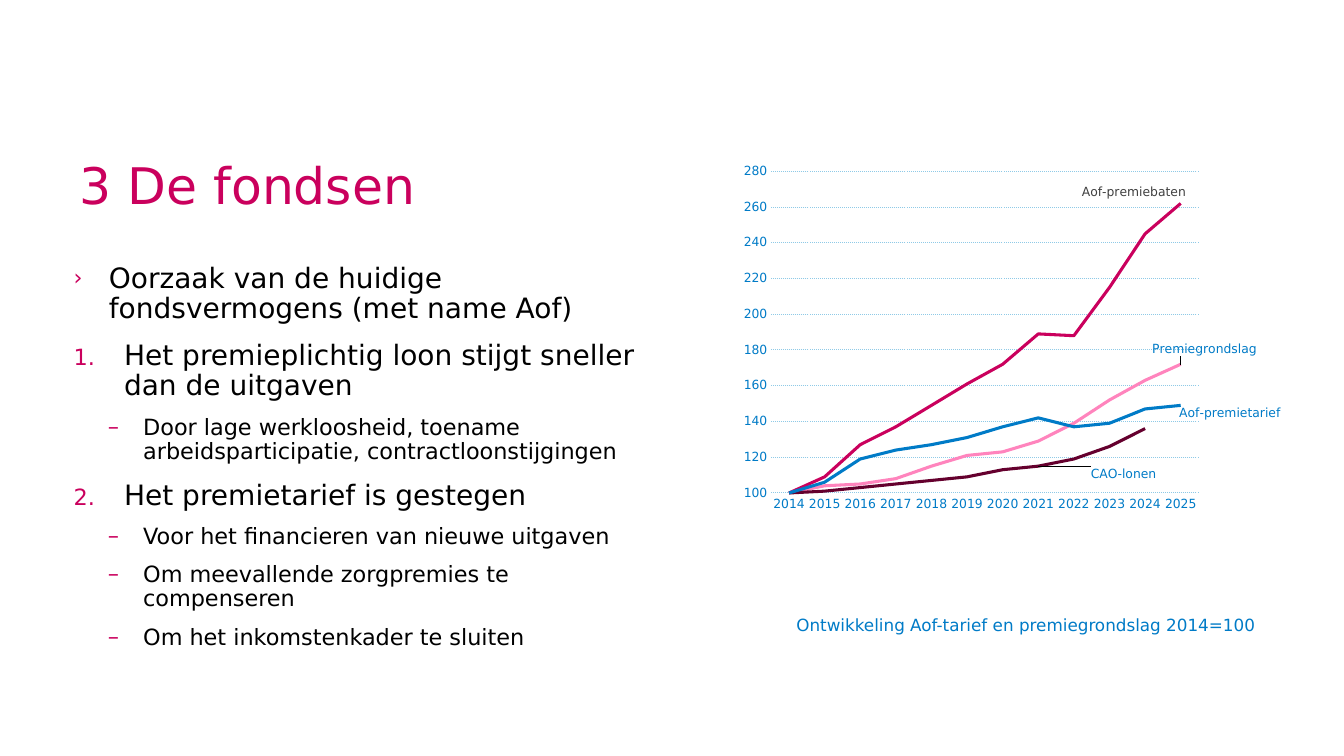
"""Builds the slide on the funds, with an outline list and a line chart."""
from typing import NamedTuple, Optional

from pptx import Presentation
from pptx.chart.data import CategoryChartData
from pptx.dml.color import RGBColor
from pptx.enum.chart import XL_CHART_TYPE, XL_LABEL_POSITION, XL_TICK_MARK
from pptx.enum.dml import MSO_LINE
from pptx.enum.text import MSO_ANCHOR, MSO_AUTO_SIZE, PP_ALIGN
from pptx.oxml import parse_xml
from pptx.oxml.ns import nsdecls, qn
from pptx.util import Emu, Inches, Pt

LINE = XL_CHART_TYPE.LINE
RIGHT = XL_LABEL_POSITION.RIGHT
NO_TICK = XL_TICK_MARK.NONE
DOTS = MSO_LINE.ROUND_DOT
TOP, BOTTOM = MSO_ANCHOR.TOP, MSO_ANCHOR.BOTTOM
NO_FIT = MSO_AUTO_SIZE.NONE
LEFT = PP_ALIGN.LEFT

FACE = "DejaVu Sans"
PINK, BLUE, BLACK = "CA005D", "007BC7", "000000"
WIDE, HIGH = Inches(13.33), Inches(7.5)
COLS, ROWS = 133.3, 75
YEARS = [str(year) for year in range(2014, 2026)]


class Box(NamedTuple):
    """A place on the grid, in columns and rows."""
    col: float
    row: float
    cols: float
    rows: float


class Mark(NamedTuple):
    """A kind of list item: bullet, level, indents in columns, and type size."""
    bullet: str
    level: int
    margin: float
    hang: float
    size: int
    before: int
    scale: int


class Trend(NamedTuple):
    """A chart line with its label point and label shift as chart shares."""
    name: str
    values: list[Optional[int]]
    hue: str
    ink: str
    point: int
    right: float
    down: float


POINT = Mark('<a:buChar {} char="›"/>', 0, 3.5, 3.5, 20, 12, 80)
COUNT = Mark('<a:buAutoNum {} type="arabicPeriod"/>', 0, 5, 5, 20, 12, 80)
DASH = Mark('<a:buChar {} char="–"/>', 1, 6.9, 3.5, 16, 10, 100)

ITEMS = [
    (POINT, "Oorzaak van de huidige fondsvermogens (met name Aof)"),
    (COUNT, "Het premieplichtig loon stijgt sneller dan de uitgaven"),
    (DASH, "Door lage werkloosheid, toename arbeidsparticipatie, contractloonstijgingen"),
    (COUNT, "Het premietarief is gestegen"),
    (DASH, "Voor het financieren van nieuwe uitgaven"),
    (DASH, "Om meevallende zorgpremies te compenseren"),
    (DASH, "Om het inkomstenkader te sluiten"),
]

TRENDS = [
    Trend("Aof-premiebaten", [100, 109, 127, 137, 149, 161, 172, 189, 188, 215, 245, 262],
          PINK, "404040", 11, -0.19, -0.03),
    Trend("Premiegrondslag", [100, 104, 105, 108, 115, 121, 123, 129, 139, 152, 163, 172],
          "FF84BD", BLUE, 11, -0.06, -0.04),
    Trend("CAO-lonen", [100, 101, 103, 105, 107, 109, 113, 115, 119, 126, 136, None],
          "65002E", BLUE, 7, 0.09, 0.02),
    Trend("Aof-premietarief", [100, 106, 119, 124, 127, 131, 137, 142, 137, 139, 147, 149],
          BLUE, BLUE, 11, -0.01, 0.02),
]


def paint(code: str) -> RGBColor:
    """Turn a hex string into a colour."""
    return RGBColor.from_string(code)


def across(cols: float) -> Emu:
    """Turn columns into a length."""
    return Emu(round(WIDE * cols / COLS))


def place(box: Box) -> tuple[Emu, Emu, Emu, Emu]:
    """Turn a grid box into left, top, width and height."""
    top, height = (Emu(round(HIGH * rows / ROWS)) for rows in (box.row, box.rows))
    return across(box.col), top, across(box.cols), height


def move(shape, box: Box) -> None:
    """Set a shape on the grid."""
    shape.left, shape.top, shape.width, shape.height = place(box)


def style(font, size: int, code: str) -> None:
    """Set the face, size and colour of a font."""
    font.name, font.size, font.bold = FACE, Pt(size), False
    font.color.rgb = paint(code)


def add_title(slide) -> None:
    """Fill the title."""
    title = slide.shapes.title
    move(title, Box(6.9, 11.5, 119.5, 10.4))
    frame = title.text_frame
    frame.text = "3 De fondsen"
    frame.vertical_anchor, frame.auto_size = BOTTOM, NO_FIT
    para = frame.paragraphs[0]
    para.alignment, para.line_spacing = LEFT, 0.9
    style(para.runs[0].font, 36, PINK)


def add_item(para, mark: Mark, text: str, first: bool) -> None:
    """Fill one list item."""
    para.text = text
    para.level, para.alignment, para.line_spacing = mark.level, LEFT, 0.9
    para.space_before, para.space_after = Pt(0 if first else mark.before), Pt(0)
    props = para._p.get_or_add_pPr()
    props.set("marL", str(across(mark.margin)))
    props.set("indent", str(-across(mark.hang)))
    space = nsdecls("a")
    for part in (f'<a:buClr {space}><a:srgbClr val="{PINK}"/></a:buClr>',
                 f'<a:buSzPct {space} val="{mark.scale * 1000}"/>',
                 f'<a:buFont {space} typeface="{FACE}"/>',
                 mark.bullet.format(space)):
        props.append(parse_xml(part))
    style(para.runs[0].font, mark.size, BLACK)


def add_list(slide) -> None:
    """Fill the body with the outline."""
    body = slide.placeholders[1]
    move(body, Box(6.3, 25.7, 57.7, 41.3))
    frame = body.text_frame
    frame.vertical_anchor, frame.auto_size = TOP, NO_FIT
    for rank, (mark, text) in enumerate(ITEMS):
        para = frame.add_paragraph() if rank else frame.paragraphs[0]
        add_item(para, mark, text, rank == 0)


def layout(inner: str):
    """Make a manual chart layout."""
    return parse_xml(f'<c:layout {nsdecls("c")}><c:manualLayout>{inner}'
                     '</c:manualLayout></c:layout>')


def add_label(series, trend: Trend) -> None:
    """Name a line beside one of its points."""
    label = series.points[trend.point].data_label
    style(label.font, 9, trend.ink)
    label.position = RIGHT
    series.data_labels.show_value = False
    group = series._element.find(qn("c:dLbls"))
    node = group.find(qn("c:dLbl"))
    node.find(qn("c:idx")).addnext(
        layout(f'<c:x val="{trend.right}"/><c:y val="{trend.down}"/>'))
    node.find(qn("c:showVal")).set("val", "0")
    node.find(qn("c:showSerName")).set("val", "1")
    group.append(parse_xml(
        f'<c:extLst {nsdecls("c")}><c:ext uri="{{CE6537A1-D6FC-4f65-9D91-7224C49458BB}}" '
        'xmlns:c15="http://schemas.microsoft.com/office/drawing/2012/chart">'
        '<c15:showLeaderLines val="1"/></c:ext></c:extLst>'))


def add_graph(slide) -> None:
    """Draw the line chart."""
    data = CategoryChartData(number_format="0")
    data.categories = YEARS
    for trend in TRENDS:
        data.add_series(trend.name, trend.values)
    chart = slide.shapes.add_chart(LINE, *place(Box(72.2, 15.1, 54.8, 38)), data).chart
    chart.has_legend = chart.has_title = False
    style(chart.font, 10, BLACK)
    for axis in (chart.category_axis, chart.value_axis):
        axis.major_tick_mark = axis.minor_tick_mark = NO_TICK
        axis.format.line.fill.background()
        style(axis.tick_labels.font, 9, BLUE)
    scale = chart.value_axis
    scale.minimum_scale, scale.maximum_scale, scale.major_unit = 100, 280, 20
    scale.has_major_gridlines = True
    grid = scale.major_gridlines.format.line
    grid.color.rgb, grid.width, grid.dash_style = paint("8FCAE7"), Pt(0.75), DOTS
    chart.plots[0].vary_by_categories = False
    for series, trend in zip(chart.plots[0].series, TRENDS):
        series.smooth = False
        series.format.line.color.rgb = paint(trend.hue)
        series.format.line.width = Pt(2.25)
        add_label(series, trend)
    area = chart._chartSpace.chart.plotArea
    for old in area.findall(qn("c:layout")):
        area.remove(old)
    area.insert(0, layout(
        '<c:layoutTarget val="inner"/><c:xMode val="edge"/><c:yMode val="edge"/>'
        '<c:x val="0.08"/><c:y val="0.05"/><c:w val="0.79"/><c:h val="0.84"/>'))


def add_note(slide) -> None:
    """Write the chart caption."""
    frame = slide.shapes.add_textbox(*place(Box(78, 60.5, 48.4, 3))).text_frame
    frame.text = "Ontwikkeling Aof-tarief en premiegrondslag 2014=100"
    style(frame.paragraphs[0].runs[0].font, 12, BLUE)


def main() -> None:
    """Build and save the slide."""
    deck = Presentation()
    deck.slide_width, deck.slide_height = WIDE, HIGH
    slide = deck.slides.add_slide(deck.slide_layouts[1])
    for step in (add_title, add_list, add_graph, add_note):
        step(slide)
    deck.save("out.pptx")


if __name__ == "__main__":
    main()
